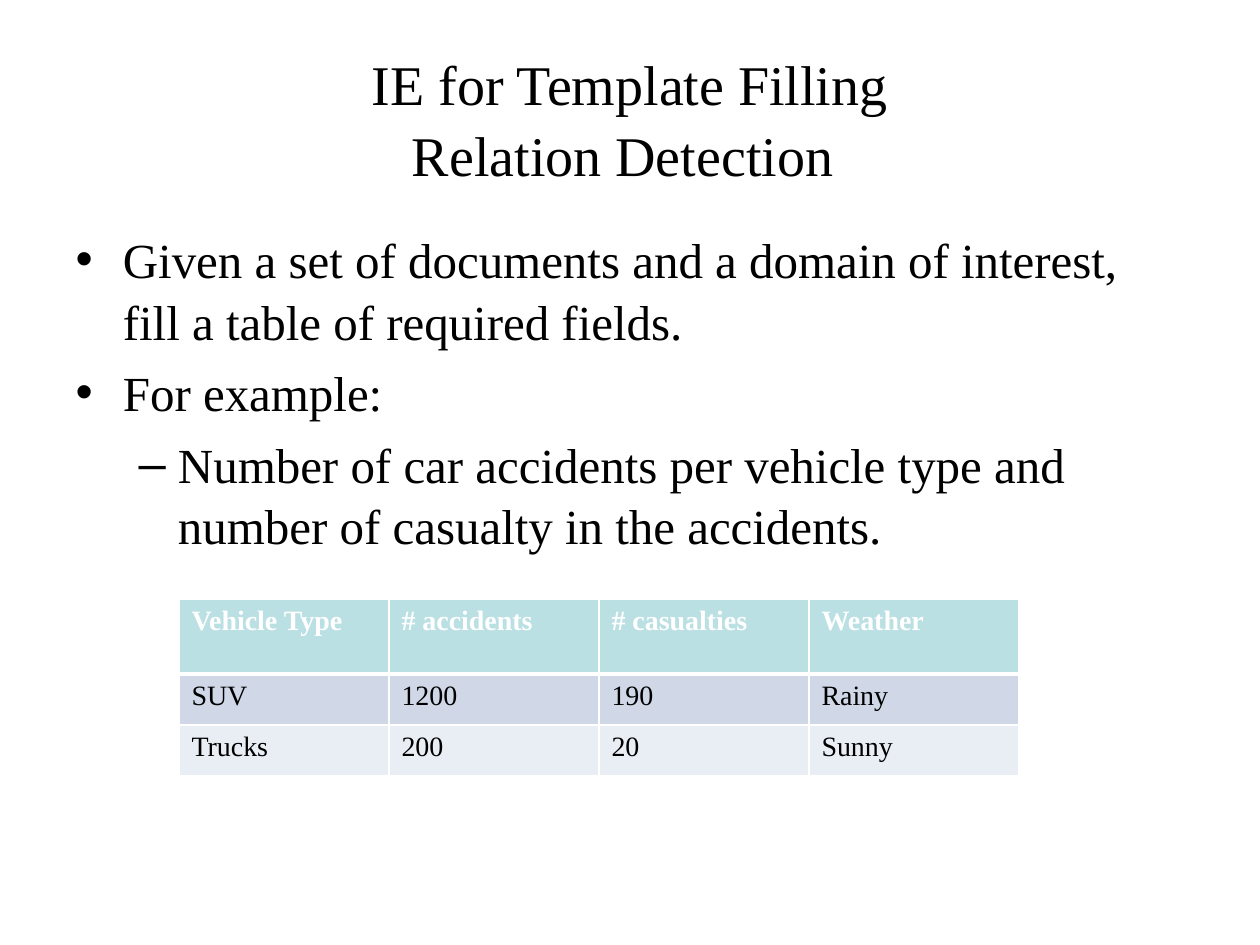
from dataclasses import dataclass

from lxml.etree import SubElement
from pptx import Presentation
from pptx.dml.color import RGBColor
from pptx.enum.text import MSO_ANCHOR, MSO_AUTO_SIZE, PP_ALIGN
from pptx.oxml.ns import qn
from pptx.util import Emu, Pt

SCALE = 914400 / 126


def px(count):
    return Emu(round(count * SCALE))


@dataclass(frozen=True)
class Theme:
    font: str = "Times New Roman"
    ink: str = "000000"
    white: str = "FFFFFF"
    head: str = "BBE0E3"
    bands: tuple = ("D0D8E8", "E9EDF4")
    title: int = 32
    body: int = 28
    cell: int = 16
    thin: int = 1
    thick: int = 3


def write(para, text, font, size, color, bold=False, align=None, pitch=None):
    para.text = text
    para.alignment = align
    para.line_spacing = pitch
    for run in para.runs:
        run.font.name = font
        run.font.size = Pt(size)
        run.font.bold = bold
        run.font.color.rgb = RGBColor.from_string(color)


class Deck:
    def __init__(self, theme):
        self.theme = theme
        self.show = Presentation()
        self.show.slide_width, self.show.slide_height = px(1260), px(945)
        self.slide = self.show.slides.add_slide(self.show.slide_layouts[1])

    def place(self, shape, box):
        shape.left, shape.top, shape.width, shape.height = map(px, box)
        shape.text_frame.auto_size = MSO_AUTO_SIZE.NONE
        return shape.text_frame

    def title(self, text, box):
        look = self.theme
        frame = self.place(self.slide.shapes.title, box)
        frame.vertical_anchor = MSO_ANCHOR.MIDDLE
        write(frame.paragraphs[0], text, look.font, look.title, look.ink,
              align=PP_ALIGN.CENTER, pitch=1.05)

    def bullets(self, items, box):
        look = self.theme
        frame = self.place(self.slide.placeholders[1], box)
        for index, (level, text) in enumerate(items):
            para = frame.add_paragraph() if index else frame.paragraphs[0]
            para.level = level
            write(para, text, look.font, look.body, look.ink, pitch=1.05)

    def border(self, cell, widths):
        props = cell._tc.get_or_add_tcPr()
        for index, (side, width) in enumerate(zip("LRTB", widths)):
            line = SubElement(props, qn(f"a:ln{side}"), w=str(Pt(width)))
            fill = SubElement(line, qn("a:solidFill"))
            SubElement(fill, qn("a:srgbClr"), val=self.theme.white)
            props.insert(index, line)

    def table(self, rows, left, top, width, heights):
        look = self.theme
        count = len(rows[0])
        grid = self.slide.shapes.add_table(
            len(rows), count, px(left), px(top), px(width), px(sum(heights))).table
        for col in grid.columns:
            col.width = px(width // count)
        for y, (row, height) in enumerate(zip(rows, heights)):
            grid.rows[y].height = px(height)
            head = y == 0
            shade = look.head if head else look.bands[(y - 1) % 2]
            above = look.thick if y == 1 else look.thin
            below = look.thick if head else look.thin
            for x, text in enumerate(row):
                cell = grid.cell(y, x)
                cell.fill.solid()
                cell.fill.fore_color.rgb = RGBColor.from_string(shade)
                self.border(cell, (look.thin, look.thin, above, below))
                write(cell.text_frame.paragraphs[0], text, look.font, look.cell,
                      look.white if head else look.ink, bold=head)

    def save(self):
        self.show.save("out.pptx")


def main():
    deck = Deck(Theme())
    deck.title("IE for Template Filling\vRelation Detection ", (63, 38, 1134, 158))
    deck.bullets([
        (0, "Given a set of documents and a domain of interest, "
            "fill a table of required fields."),
        (0, "For example:"),
        (1, "Number of car accidents per vehicle type and "
            "number of casualty in the accidents."),
    ], (63, 220, 1134, 624))
    deck.table([
        ("Vehicle Type", "# accidents", "# casualties", "Weather"),
        ("SUV", "1200", "190", "Rainy"),
        ("Trucks", "200", "20", "Sunny"),
    ], 179, 599, 840, (75, 51, 51))
    deck.save()


if __name__ == "__main__":
    main()
